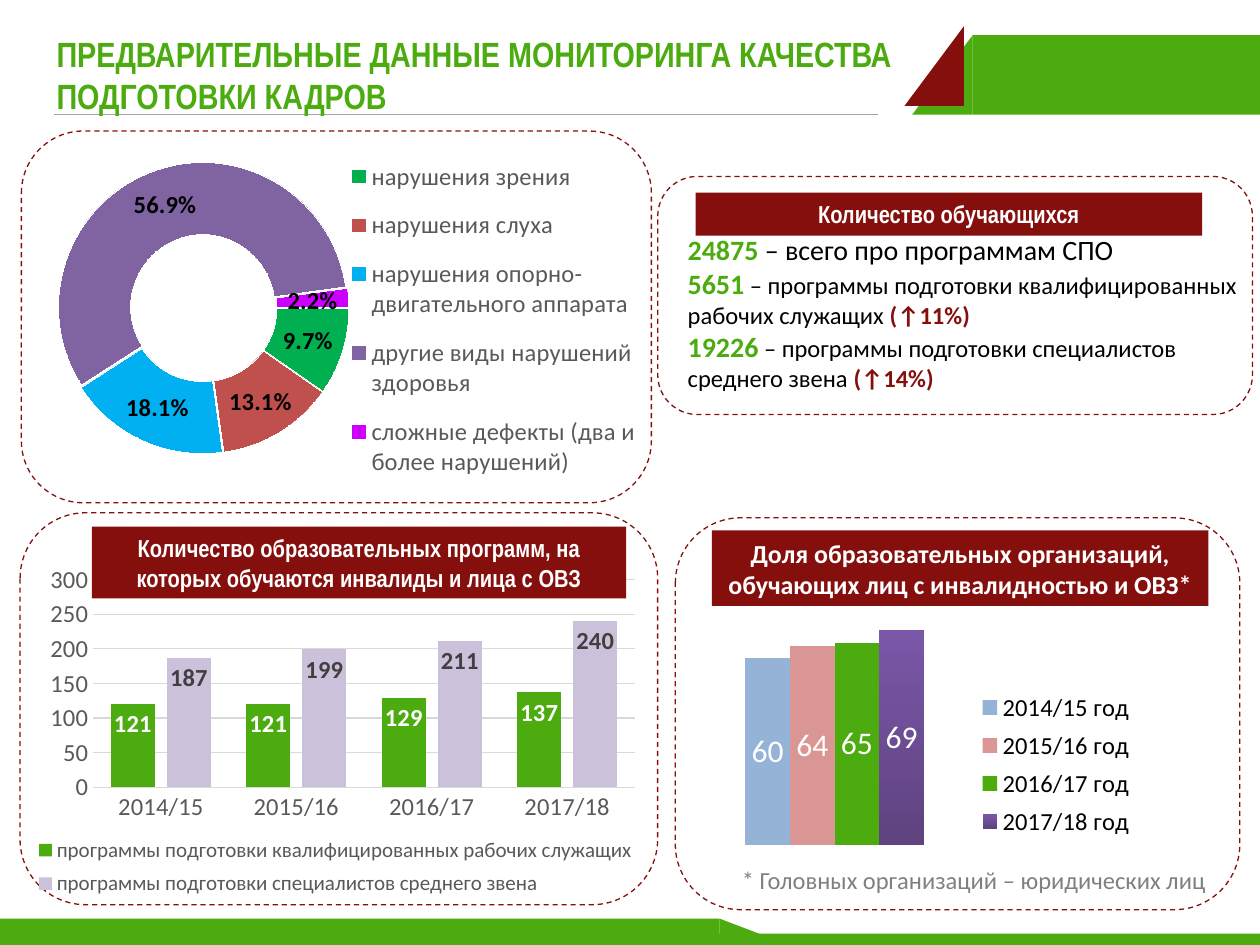
from dataclasses import dataclass

from lxml import etree
from pptx import Presentation
from pptx import util as u
from pptx.chart.data import CategoryChartData
from pptx.dml.color import RGBColor
from pptx.enum import chart as ch, dml, shapes, text
from pptx.oxml import ns


@dataclass(frozen=True)
class Theme:
    green: str = "4BAB0F"
    red: str = "850F0D"
    white: str = "FFFFFF"
    black: str = "000000"
    grey: str = "595959"
    note: str = "808080"
    dark: str = "404040"
    grid: str = "D9D9D9"
    rule: str = "A6A6A6"
    head: str = "Arial Narrow"
    body: str = "Calibri"
    title_size: float = 20
    big: float = 16
    normal: float = 14
    small: float = 12
    share_size: float = 18
    share_head: float = 14.8


T = Theme()
BOX = shapes.MSO_SHAPE.RECTANGLE
TRIANGLE = shapes.MSO_SHAPE.RIGHT_TRIANGLE
ROUND = shapes.MSO_SHAPE.ROUNDED_RECTANGLE


def rgb(code):
    return RGBColor.from_string(code)


def inches(box):
    return [u.Inches(v) for v in box]


def set_font(font, size, color, name=T.body, bold=False):
    font.size, font.name, font.bold = u.Pt(size), name, bold
    font.color.rgb = rgb(color)


def add_block(s, kind, box, color, flip=False):
    sp = s.shapes.add_shape(kind, *inches(box))
    sp.shadow.inherit = False
    sp.fill.solid()
    sp.fill.fore_color.rgb = rgb(color)
    sp.line.fill.background()
    if flip:
        sp._element.spPr.xfrm.set("flipH", "1")
    return sp


def add_frame(s, box):
    sp = s.shapes.add_shape(ROUND, *inches(box))
    sp.shadow.inherit = False
    sp.fill.background()
    sp.line.color.rgb = rgb(T.red)
    sp.line.width = u.Pt(0.75)
    sp.line.dash_style = dml.MSO_LINE.DASH


def add_banner(s, box, words, size=T.normal, font=T.head):
    tf = add_block(s, BOX, box, T.red).text_frame
    tf.word_wrap = True
    tf.vertical_anchor = text.MSO_ANCHOR.MIDDLE
    p = tf.paragraphs[0]
    p.text = words
    p.alignment = text.PP_ALIGN.CENTER
    set_font(p.font, size, T.white, font, True)


def add_text(s, box, lines, anchor=text.MSO_ANCHOR.TOP):
    """Each line is a list of (words, size, color, font, bold) runs."""
    tf = s.shapes.add_textbox(*inches(box)).text_frame
    tf.word_wrap = True
    tf.vertical_anchor = anchor
    for i, runs in enumerate(lines):
        p = tf.add_paragraph() if i else tf.paragraphs[0]
        for words, *style in runs:
            r = p.add_run()
            r.text = words
            set_font(r.font, *style)


def add_rule(s, x1, x2, y):
    c = s.shapes.add_connector(shapes.MSO_CONNECTOR.STRAIGHT, *inches((x1, y, x2, y)))
    c.line.color.rgb = rgb(T.rule)
    c.line.width = u.Pt(0.75)
    etree.SubElement(c._element.spPr, ns.qn("a:effectLst"))


def make_layout(x, y, w, h, inner=False):
    layout = etree.Element(ns.qn("c:layout"))
    manual = etree.SubElement(layout, ns.qn("c:manualLayout"))
    items = [("layoutTarget", "inner")] if inner else []
    items += [("xMode", "edge"), ("yMode", "edge"), ("x", x), ("y", y), ("w", w), ("h", h)]
    for tag, val in items:
        etree.SubElement(manual, ns.qn("c:" + tag)).set("val", str(val))
    return layout


def add_chart(s, kind, box, cats, series, plot_area, legend_at, legend_area, legend_font):
    data = CategoryChartData()
    data.categories = cats
    for name, vals in series:
        data.add_series(name, vals)
    chart = s.shapes.add_chart(kind, *inches(box), data).chart
    chart.has_title = False
    set_font(chart.font, T.normal, T.black)
    chart.has_legend = True
    chart.legend.position = legend_at
    chart.legend.include_in_layout = False
    set_font(chart.legend.font, *legend_font)
    chart.plots[0].vary_by_categories = False

    # Fixed places for plot and legend
    area = chart._chartSpace.chart.plotArea
    for old in area.findall(ns.qn("c:layout")):
        area.remove(old)
    area.insert(0, make_layout(*plot_area, inner=True))
    legend = chart.legend._element
    for old in legend.findall(ns.qn("c:layout")):
        legend.remove(old)
    legend.find(ns.qn("c:legendPos")).addnext(make_layout(*legend_area))
    return chart


def add_labels(series, position, size, color, bold):
    labels = series.data_labels
    labels.show_value = True
    labels.position = position
    set_font(labels.font, size, color, bold=bold)


def fill_solid(item, color):
    item.format.fill.solid()
    item.format.fill.fore_color.rgb = rgb(color)


def add_disability_chart(s):
    cats = ["нарушения зрения", "нарушения слуха", "нарушения опорно-двигательного аппарата",
            "другие виды нарушений здоровья", "сложные дефекты (два и более нарушений)"]
    chart = add_chart(s, ch.XL_CHART_TYPE.DOUGHNUT, (0.41, 0.92, 4.72, 3.59), cats,
                      [("Series 1", (9.7, 13.1, 18.1, 56.9, 2.2))], (0.01, 0.1, 0.49, 0.65),
                      ch.XL_LEGEND_POSITION.RIGHT, (0.5, 0.06, 0.5, 0.78), (T.normal, T.grey))
    plot = chart.plots[0]
    plot.vary_by_categories = True
    plot._element.find(ns.qn("c:firstSliceAng")).set("val", "90")
    ring = plot.series[0]
    for i, color in enumerate(("00B050", "C0504D", "00B0F0", "8064A2", "CC00FF")):
        point = ring.points[i]
        fill_solid(point, color)
        point.format.line.color.rgb = rgb(T.white)
    explosion = etree.Element(ns.qn("c:explosion"), val="2")
    ring._element.find(ns.qn("c:dPt")).addprevious(explosion)
    labels = ring.data_labels
    labels.show_value, labels.show_percentage = False, True
    labels.number_format, labels.number_format_is_linked = "0.0%", False
    set_font(labels.font, T.normal, T.black, bold=True)


def add_programs_chart(s):
    chart = add_chart(s, ch.XL_CHART_TYPE.COLUMN_CLUSTERED, (0.19, 4.42, 5, 3),
                      ["2014/15", "2015/16", "2016/17", "2017/18"],
                      [("программы подготовки квалифицированных рабочих служащих", (121, 121, 129, 137)),
                       ("программы подготовки специалистов среднего звена", (187, 199, 211, 240))],
                      (0.11, 0.06, 0.86, 0.55), ch.XL_LEGEND_POSITION.BOTTOM,
                      (0.01, 0.72, 0.97, 0.2), (T.small, T.grey))
    plot = chart.plots[0]
    plot.gap_width, plot.overlap = 80, -27
    for series, color, ink in zip(plot.series, (T.green, "CCC1DA"), (T.white, T.dark)):
        fill_solid(series, color)
        add_labels(series, ch.XL_LABEL_POSITION.INSIDE_END, T.normal, ink, True)
    cat, val = chart.category_axis, chart.value_axis
    for axis in (cat, val):
        axis.major_tick_mark = axis.minor_tick_mark = ch.XL_TICK_MARK.NONE
        set_font(axis.tick_labels.font, T.normal, T.grey)
    val.minimum_scale, val.maximum_scale, val.major_unit = 0, 300, 50
    val.format.line.fill.background()
    for line in (cat.format.line, val.major_gridlines.format.line):
        line.color.rgb = rgb(T.grid)
        line.width = u.Pt(0.75)


def add_share_chart(s):
    chart = add_chart(s, ch.XL_CHART_TYPE.COLUMN_CLUSTERED, (5.65, 4.73, 3.82, 2.27), ["1"],
                      [(f"{2014 + i}/{15 + i} год", (v,)) for i, v in enumerate((60, 64, 65, 69))],
                      (0, 0, 0.51, 0.87), ch.XL_LEGEND_POSITION.RIGHT,
                      (0.55, 0.31, 0.33, 0.56), (T.normal, T.black))
    plot = chart.plots[0]
    plot.gap_width = 150
    for series, color in zip(plot.series, ("95B3D7", "D99694", T.green, "8064A2")):
        fill_solid(series, color)
        add_labels(series, ch.XL_LABEL_POSITION.CENTER, T.share_size, T.white, False)
    # The latest year is shaded from top to bottom
    fill = plot.series[3].format.fill
    fill.gradient()
    fill.gradient_angle = 270
    for stop, color in zip(fill.gradient_stops, ("7B57A8", "5E437F")):
        stop.color.rgb = rgb(color)
    val = chart.value_axis
    val.minimum_scale, val.maximum_scale = 0, 80
    val.has_major_gridlines = False
    val.visible = chart.category_axis.visible = False


def add_decor(s):
    add_rule(s, 0.43, 6.97, 0.91)
    add_block(s, BOX, (7.72, 0.28, 2.28, 0.63), T.green)
    add_block(s, TRIANGLE, (7.24, 0.28, 0.48, 0.63), T.green, flip=True)
    add_block(s, BOX, (0, 7.29, 5.71, 0.21), T.green)
    add_block(s, TRIANGLE, (5.71, 7.29, 0.55, 0.21), T.green)
    add_block(s, BOX, (2.4, 7.41, 7.6, 0.09), T.green)
    add_block(s, TRIANGLE, (7.18, 0.21, 0.47, 0.63), T.red, flip=True)


def main():
    prs = Presentation()
    prs.slide_width, prs.slide_height = u.Inches(10), u.Inches(7.5)
    s = prs.slides.add_slide(prs.slide_layouts[6])

    # Header, footer and title
    add_decor(s)
    add_text(s, (0.35, 0.18, 7.31, 0.83),
             [[("ПРЕДВАРИТЕЛЬНЫЕ ДАННЫЕ МОНИТОРИНГА КАЧЕСТВА ПОДГОТОВКИ КАДРОВ",
                T.title_size, T.green, T.head, True)]], text.MSO_ANCHOR.MIDDLE)

    # Panel frames
    for box in ((0.17, 1.04, 5, 2.95), (0.16, 4.07, 5.06, 3.11),
                (5.22, 1.4, 4.72, 1.89), (5.36, 4.11, 4.48, 3.11)):
        add_frame(s, box)

    # Student numbers
    number = (T.big, T.green, T.body, True)
    plain = (T.normal, T.black)
    growth = (T.normal, T.red, T.body, True)
    add_text(s, (5.36, 1.8, 4.75, 1.62), [
        [("24875 ", *number), ("– всего про программам СПО", T.big, T.black)],
        [("5651", *number), (" – программы подготовки квалифицированных рабочих служащих ", *plain),
         ("(↑11%)", *growth)],
        [("19226", *number), (" – программы подготовки специалистов среднего звена ", *plain),
         ("(↑14%)", *growth)]])
    add_banner(s, (5.52, 1.53, 4.02, 0.34), "Количество обучающихся")

    # Charts with their banners
    add_share_chart(s)
    add_banner(s, (5.65, 4.21, 3.94, 0.6),
               "Доля образовательных организаций, обучающих лиц с инвалидностью и ОВЗ*",
               T.share_head, T.body)
    add_programs_chart(s)
    add_banner(s, (0.73, 4.18, 4.24, 0.57),
               "Количество образовательных программ, на которых обучаются инвалиды и лица с ОВЗ")
    add_disability_chart(s)
    add_text(s, (5.79, 6.82, 4.02, 0.34),
             [[("* Головных организаций – юридических лиц", T.normal, T.note)]])

    prs.save("out.pptx")


if __name__ == "__main__":
    main()
